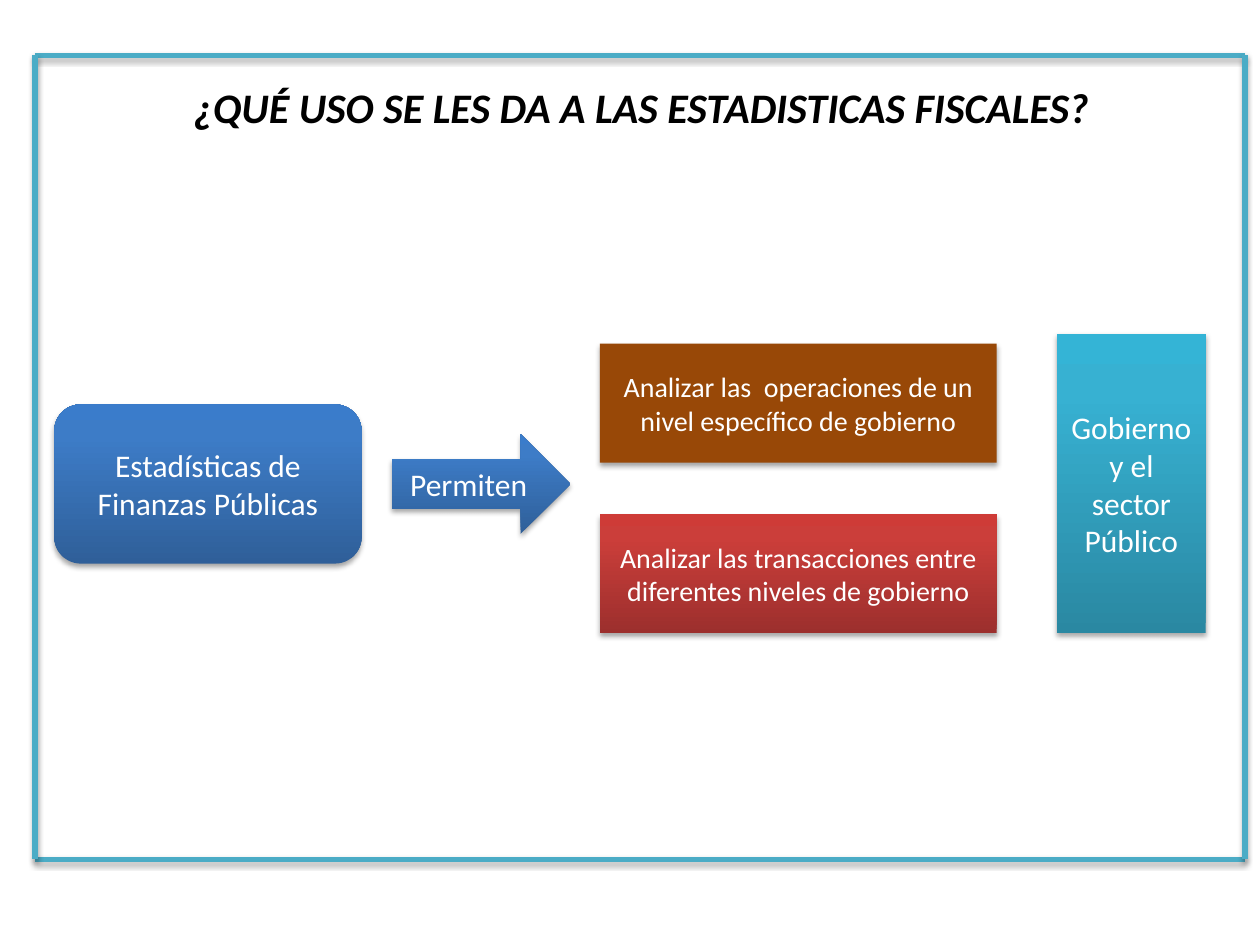
from collections import namedtuple
from copy import deepcopy

from lxml.etree import SubElement
from pptx import Presentation
from pptx.dml.color import RGBColor
from pptx.enum.shapes import MSO_CONNECTOR, MSO_SHAPE
from pptx.enum.text import MSO_ANCHOR, MSO_AUTO_SIZE, PP_ALIGN
from pptx.oxml.ns import qn
from pptx.util import Pt

Box = namedtuple("Box", "left top width height")

FONT = "Calibri"
COLORS = {"title": "000000", "text": "FFFFFF", "frame": "4BACC6", "shadow": "000000"}
FILLS = {
    "blue": ["2F5F99", "3D7CC7", "3A7CCB"],
    "brown": ["984807"],
    "red": ["9C2F2D", "CB3E3A", "CE3B37"],
    "aqua": ["2A88A2", "37B1D2", "34B4D6"],
}
STOPS = [0, 0.8, 1]


def add_shadow(shape):
    """Give a shape or connector a soft shadow falling downwards."""
    effects = SubElement(shape._element.spPr, qn("a:effectLst"))
    shadow = SubElement(
        effects, qn("a:outerShdw"), blurRad=str(Pt(3.1)), dist=str(Pt(1.8)),
        dir="5400000", rotWithShape="0")
    color = SubElement(shadow, qn("a:srgbClr"), val=COLORS["shadow"])
    SubElement(color, qn("a:alpha"), val="35000")


def paint(shape, colors):
    """Fill a shape with one colour, or with a gradient rising from the bottom."""
    if len(colors) == 1:
        shape.fill.solid()
        shape.fill.fore_color.rgb = RGBColor.from_string(colors[0])
        return
    shape.fill.gradient()
    shape.fill.gradient_angle = 90
    stop_list = shape._element.spPr.find(".//" + qn("a:gsLst"))
    stop_list.append(deepcopy(stop_list[-1]))
    for stop, position, color in zip(shape.fill.gradient_stops, STOPS, colors):
        stop.position = position
        stop.color.rgb = RGBColor.from_string(color)


def write(shape, text, size, color, anchor):
    """Put one centred paragraph in a shape and return its font."""
    frame = shape.text_frame
    frame.word_wrap = True
    frame.vertical_anchor = anchor
    para = frame.paragraphs[0]
    para.text = text
    para.alignment = PP_ALIGN.CENTER
    font = para.font
    font.name, font.size = FONT, Pt(size)
    font.color.rgb = RGBColor.from_string(color)
    return font


def add_block(page, kind, box, text, size, fill):
    """Add a filled, shadowed shape with white text."""
    shape = page.shapes.add_shape(kind, *map(Pt, box))
    paint(shape, FILLS[fill])
    shape.line.fill.background()
    add_shadow(shape)
    write(shape, text, size, COLORS["text"], MSO_ANCHOR.MIDDLE)


def add_title(page, box):
    """Place the slide title."""
    title = page.shapes.title
    title.left, title.top, title.width, title.height = map(Pt, box)
    font = write(title, "¿QUÉ USO SE LES DA A LAS ESTADISTICAS FISCALES?",
                 24, COLORS["title"], MSO_ANCHOR.TOP)
    font.bold = font.italic = True
    title.text_frame.auto_size = MSO_AUTO_SIZE.SHAPE_TO_FIT_TEXT


def add_diagram(page, box):
    """Lay out source, arrow, stacked uses and scope from left to right."""
    middle = box.top + box.height / 2 + 0.3
    source = Box(box.left, middle - 45.5, 175.6, 91)
    arrow = Box(box.left + 193, middle - 28.5, 102, 57)
    scope = Box(box.left + box.width - 85, box.top, 85, box.height)
    add_block(page, MSO_SHAPE.ROUNDED_RECTANGLE, source,
              "Estadísticas de Finanzas Públicas", 18, "blue")
    uses = [
        ("Analizar las  operaciones de un nivel específico de gobierno", "brown"),
        ("Analizar las transacciones entre diferentes niveles de gobierno", "red"),
    ]
    for row, (text, fill) in enumerate(uses):
        use = Box(box.left + 311.8, box.top + 5.6 + 97.5 * row, 226.8, 68)
        add_block(page, MSO_SHAPE.RECTANGLE, use, text, 16, fill)
    add_block(page, MSO_SHAPE.RIGHT_ARROW, arrow, "Permiten", 18, "blue")
    add_block(page, MSO_SHAPE.RECTANGLE, scope, "Gobierno y el sector Público", 18, "aqua")


def add_frame(page, box):
    """Draw the four grouped border lines."""
    right, bottom = box.left + box.width, box.top + box.height
    sides = [(box.left, y, right, y) for y in (box.top, bottom)]
    sides += [(x, box.top, x, bottom) for x in (box.left, right)]
    group = page.shapes.add_group_shape()
    for side in sides:
        line = group.shapes.add_connector(MSO_CONNECTOR.STRAIGHT, *map(Pt, side))
        line.line.color.rgb = RGBColor.from_string(COLORS["frame"])
        line.line.width = Pt(3)
        add_shadow(line)


def main():
    """Build and save the slide."""
    deck = Presentation()
    deck.slide_width, deck.slide_height = Pt(720), Pt(540)
    page = deck.slides.add_slide(deck.slide_layouts[5])
    add_title(page, Box(44, 43.2, 645, 36))
    add_diagram(page, Box(31, 190.8, 658, 171))
    add_frame(page, Box(20, 31.7, 691.4, 459.3))
    deck.save("out.pptx")


if __name__ == "__main__":
    main()
